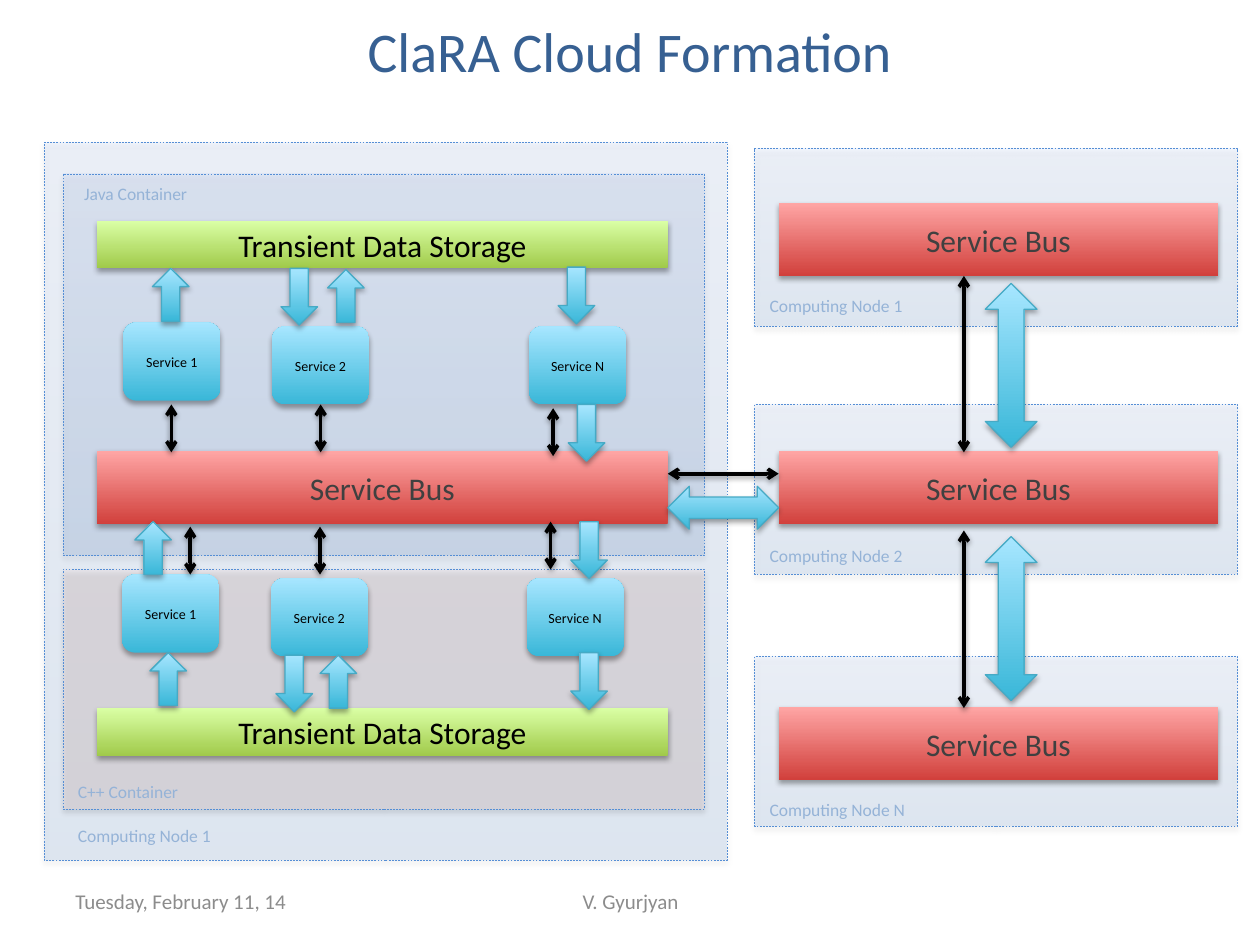
from dataclasses import dataclass
from typing import NamedTuple, Optional

import lxml.etree
import pptx
import pptx.dml.color
import pptx.enum.dml
import pptx.enum.shapes
import pptx.enum.text
import pptx.oxml.ns
import pptx.util

Inches = pptx.util.Inches
Kind = pptx.enum.shapes.MSO_SHAPE
Align = pptx.enum.text.PP_ALIGN
Anchor = pptx.enum.text.MSO_ANCHOR
qn = pptx.oxml.ns.qn


class Gradient(NamedTuple):
    bottom: str
    top: str


@dataclass(frozen=True)
class Theme:
    font: str = "Calibri"
    title_size: int = 32
    bar_size: int = 18
    footer_size: int = 12
    label_size: int = 10
    service_size: int = 8
    title: str = "376092"
    label: str = "95B3D7"
    footer: str = "8C8C8C"
    bus_text: str = "404040"
    black: str = "000000"
    frame_line: str = "558ED5"
    arrow_line: str = "46AAC5"
    node: Gradient = Gradient("3F80CE", "A4C4FF")
    cpp: Gradient = Gradient("F2DCDB", "F2DCDB")
    storage: Gradient = Gradient("A0CA4A", "DAFFA5")
    bus: Gradient = Gradient("D1403C", "FFA6A5")
    service: Gradient = Gradient("39B7D8", "A7E6FF")


THEME = Theme()


class Area(NamedTuple):
    left: float
    top: float
    width: float
    height: float

    def lengths(self) -> list:
        return [Inches(value) for value in self]


class Link(NamedTuple):
    x1: float
    y1: float
    x2: float
    y2: float


class Node(NamedTuple):
    name: str
    top: float
    height: float
    bus_top: float
    label_top: float
    label_width: float


def rgb(color: str):
    return pptx.dml.color.RGBColor.from_string(color)


def write(shape, text: str, size: int, color: str, align=Align.CENTER, anchor=Anchor.MIDDLE) -> None:
    frame = shape.text_frame
    frame.text = text
    frame.word_wrap = True
    frame.vertical_anchor = anchor
    para = frame.paragraphs[0]
    para.alignment = align
    font = para.runs[0].font
    font.name, font.size = THEME.font, pptx.util.Pt(size)
    font.color.rgb = rgb(color)


def add_shadow(effects, opacity: int, distance: float) -> None:
    shadow = lxml.etree.SubElement(
        effects, qn("a:outerShdw"), blurRad=str(pptx.util.Pt(3.1)),
        dist=str(pptx.util.Pt(distance)), dir="5400000", rotWithShape="0")
    color = lxml.etree.SubElement(shadow, qn("a:srgbClr"), val=THEME.black)
    lxml.etree.SubElement(color, qn("a:alpha"), val=str(opacity * 1000))


def add_block(page, kind, area: Area, colors: Gradient, opacity: int = 100,
              outline: Optional[str] = None, weight: float = 0.75):
    box = page.shapes.add_shape(kind, *area.lengths())
    properties = box._element.spPr
    if colors.bottom == colors.top:
        box.fill.solid()
        box.fill.fore_color.rgb = rgb(colors.top)
    else:
        box.fill.gradient()
        box.fill.gradient_angle = 90
        for stop, color in zip(box.fill.gradient_stops, colors):
            stop.color.rgb = rgb(color)
    if opacity < 100:
        for color in properties.iter(qn("a:srgbClr")):
            lxml.etree.SubElement(color, qn("a:alpha"), val=str(opacity * 1000))
    if outline:
        box.line.color.rgb = rgb(outline)
        box.line.width = pptx.util.Pt(weight)
    else:
        box.line.fill.background()
    box.shadow.inherit = False
    add_shadow(properties.find(qn("a:effectLst")), 35, 1.8)
    return box


def add_frame(page, area: Area, colors: Gradient = THEME.node, opacity: int = 12) -> None:
    box = add_block(page, Kind.RECTANGLE, area, colors, opacity, THEME.frame_line, 0.25)
    box.line.dash_style = pptx.enum.dml.MSO_LINE.DASH


def add_bus(page, left: float, top: float, width: float) -> None:
    box = add_block(page, Kind.RECTANGLE, Area(left, top, width, 0.58), THEME.bus)
    write(box, "Service Bus", THEME.bar_size, THEME.bus_text)


def add_arrow(page, kind, area: Area) -> None:
    add_block(page, kind, area, THEME.service, outline=THEME.arrow_line)


def add_text(page, area: Area, *style, **layout):
    box = page.shapes.add_textbox(*area.lengths())
    write(box, *style, **layout)
    return box


def add_label(page, text: str, left: float, top: float, width: float) -> None:
    box = add_text(page, Area(left, top, width, 0.27), text, THEME.label_size,
                   THEME.label, align=Align.LEFT, anchor=Anchor.TOP)
    box.text_frame.word_wrap = False
    box.text_frame.auto_size = pptx.enum.text.MSO_AUTO_SIZE.SHAPE_TO_FIT_TEXT


def add_link(page, link: Link, source=None) -> None:
    x1, y1, x2, y2 = (Inches(value) for value in link)
    if source is not None:
        x2 = source.left + source.width // 2
    line = page.shapes.add_connector(pptx.enum.shapes.MSO_CONNECTOR.STRAIGHT, x1, y1, x2, y2)
    if source is not None:
        line.begin_connect(source, 2)
    line.line.color.rgb = rgb(THEME.black)
    line.line.width = pptx.util.Pt(2)
    properties = line._element.spPr
    for end in ("a:headEnd", "a:tailEnd"):
        lxml.etree.SubElement(properties.find(qn("a:ln")), qn(end), type="arrow")
    add_shadow(lxml.etree.SubElement(properties, qn("a:effectLst")), 38, 1.6)


def main() -> None:
    deck = pptx.Presentation()
    deck.slide_width, deck.slide_height = Inches(10), Inches(7.5)
    page = deck.slides.add_slide(deck.slide_layouts[6])

    # Left node with its two containers
    add_frame(page, Area(0.35, 1.13, 5.42, 5.7))
    add_frame(page, Area(0.5, 4.52, 5.09, 1.9), THEME.cpp, 30)
    add_frame(page, Area(0.5, 1.38, 5.09, 3.03))
    add_text(page, Area(0.5, 0.08, 9, 1.01), "ClaRA Cloud Formation",
             THEME.title_size, THEME.title, anchor=Anchor.TOP)

    # Storage bars and the shared bus
    for top in (1.75, 5.62):
        box = add_block(page, Kind.RECTANGLE, Area(0.77, top, 4.53, 0.38), THEME.storage)
        write(box, "Transient Data Storage", THEME.bar_size, THEME.black)
    add_bus(page, 0.77, 3.58, 4.53)

    # Services: one row per container
    services = []
    for row_top, lefts in ((2.56, (0.98, 2.16, 4.2)), (4.56, (0.97, 2.15, 4.18))):
        for name, left, drop in zip("12N", lefts, (0, 0.03, 0.03)):
            area = Area(left, row_top + drop, 0.77, 0.62)
            box = add_block(page, Kind.ROUNDED_RECTANGLE, area, THEME.service)
            write(box, f"Service {name}", THEME.service_size, THEME.black)
            services.append(box)

    # Data flow arrows
    up = [(1.21, 2.13), (2.6, 2.14), (2.54, 5.2), (1.19, 5.18), (1.07, 4.14)]
    down = [(2.23, 2.13), (4.43, 2.12), (4.51, 3.21), (4.53, 4.14), (4.53, 5.18), (2.19, 5.2)]
    for kind, height, places in ((Kind.UP_ARROW, 0.42, up), (Kind.DOWN_ARROW, 0.45, down)):
        for left, top in places:
            add_arrow(page, kind, Area(left, top, 0.29, height))

    # Control links between services and bus
    add_link(page, Link(2.54, 3.21, 2.54, 3.59), services[1])
    for x, top in ((1.36, 3.21), (4.39, 3.24), (1.51, 4.18), (2.54, 4.18), (4.37, 4.14)):
        add_link(page, Link(x, top, x, top + 0.38))

    add_label(page, "Java Container", 0.57, 1.4, 1.04)
    add_label(page, "C++ Container", 0.52, 6.15, 1.02)
    add_label(page, "Computing Node 1", 0.52, 6.5, 1.27)

    # Right-hand nodes
    for node in (Node("2", 3.21, 1.35, 3.58, 4.28, 1.27),
                 Node("1", 1.18, 1.41, 1.61, 2.29, 1.27),
                 Node("N", 5.21, 1.35, 5.61, 6.29, 1.29)):
        add_frame(page, Area(5.99, node.top, 3.83, node.height))
        add_bus(page, 6.18, node.bus_top, 3.49)
        add_label(page, f"Computing Node {node.name}", 6.01, node.label_top, node.label_width)

    # Links between buses
    add_arrow(page, Kind.LEFT_RIGHT_ARROW, Area(5.3, 3.86, 0.88, 0.34))
    for top in (2.25, 4.26):
        add_arrow(page, Kind.UP_DOWN_ARROW, Area(7.82, top, 0.41, 1.3))
    for link in (Link(5.3, 3.76, 6.18, 3.76), Link(7.65, 2.19, 7.65, 3.59),
                 Link(7.65, 4.21, 7.65, 5.62)):
        add_link(page, link)

    # Footer
    add_text(page, Area(0.5, 6.95, 2.33, 0.4), "Tuesday, February 11, 14",
             THEME.footer_size, THEME.footer, align=Align.LEFT)
    add_text(page, Area(3.42, 6.95, 3.17, 0.4), "V. Gyurjyan", THEME.footer_size, THEME.footer)

    deck.save("out.pptx")


if __name__ == "__main__":
    main()
